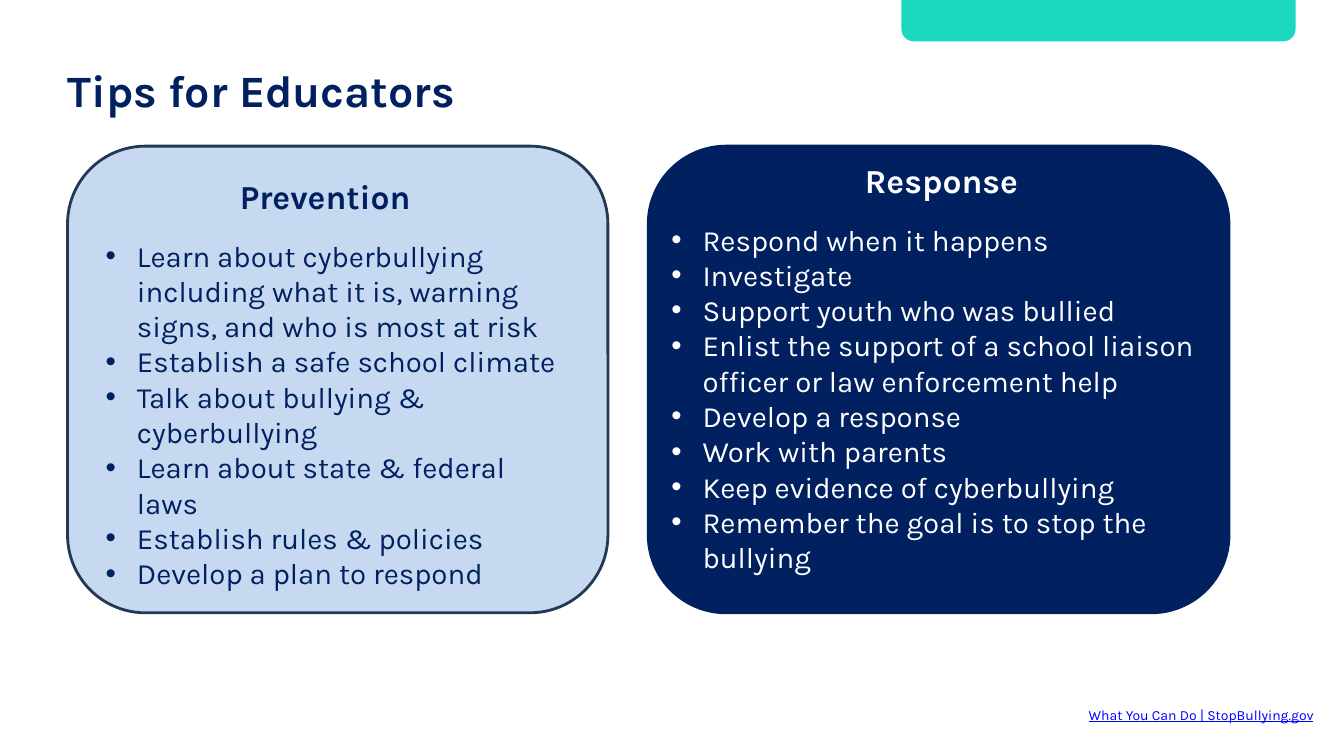
from pptx import Presentation
from pptx.dml.color import RGBColor
from pptx.enum.shapes import MSO_SHAPE
from pptx.enum.text import MSO_ANCHOR, MSO_AUTO_SIZE, PP_ALIGN
from pptx.oxml import parse_xml
from pptx.oxml.ns import nsdecls
from pptx.util import Emu, Pt

ROUNDED = MSO_SHAPE.ROUNDED_RECTANGLE
MIDDLE = MSO_ANCHOR.MIDDLE
GROW = MSO_AUTO_SIZE.SHAPE_TO_FIT_TEXT
NO_FIT = MSO_AUTO_SIZE.NONE
LEFT = PP_ALIGN.LEFT

EMU_PER_PX = 9144  # 100 px to the inch
FONT = "Karla"
NAVY, WHITE, TEAL = "002060", "FFFFFF", "1CD8BF"
PALE_BLUE, SLATE, LINK_BLUE = "C6D9F1", "233953", "0000FF"

PREVENTION_TIPS = [
    "Learn about cyberbullying including what it is, warning signs, and who is most at risk",
    "Establish a safe school climate",
    "Talk about bullying & cyberbullying",
    "Learn about state & federal laws",
    "Establish rules & policies",
    "Develop a plan to respond",
]
RESPONSE_TIPS = [
    "Respond when it happens",
    "Investigate",
    "Support youth who was bullied",
    "Enlist the support of a school liaison officer or law enforcement help",
    "Develop a response",
    "Work with parents",
    "Keep evidence of cyberbullying",
    "Remember the goal is to stop the bullying",
]


def px(length):
    return Emu(length * EMU_PER_PX)


def rgb(color):
    return RGBColor.from_string(color)


class SlideBuilder:
    def __init__(self, presentation):
        layout = presentation.slide_layouts[5]
        self.slide = presentation.slides.add_slide(layout)

    def format_runs(self, paragraph, size, color, bold=False, underline=False):
        for run in paragraph.runs:
            font = run.font
            font.name, font.size = FONT, Pt(size)
            font.bold, font.underline = bold, underline
            font.color.rgb = rgb(color)

    def title(self, text, box):
        shape = self.slide.shapes.title
        shape.left, shape.top, shape.width, shape.height = map(px, box)
        frame = shape.text_frame
        frame.text = text
        frame.auto_size = NO_FIT
        frame.word_wrap = True
        frame.vertical_anchor = MIDDLE
        frame.margin_left = frame.margin_right = 0
        frame.margin_top = frame.margin_bottom = 0
        paragraph = frame.paragraphs[0]
        paragraph.alignment = LEFT
        paragraph.line_spacing = 0.9
        self.format_runs(paragraph, 32, NAVY, bold=True)

    def panel(self, box, fill, line=None, corner=None):
        shape = self.slide.shapes.add_shape(ROUNDED, *map(px, box))
        shape.shadow.inherit = False
        shape.fill.solid()
        shape.fill.fore_color.rgb = rgb(fill)
        if line:
            shape.line.color.rgb = rgb(line)
            shape.line.width = Pt(2)
        else:
            shape.line.fill.background()
        if corner is not None:
            shape.adjustments[0] = corner

    def text(self, lines, box, size, color, bullets=False, **style):
        frame = self.slide.shapes.add_textbox(*map(px, box)).text_frame
        frame.word_wrap = True
        frame.auto_size = GROW
        for index, line in enumerate(lines):
            paragraph = frame.add_paragraph() if index else frame.paragraphs[0]
            paragraph.text = line
            if bullets:
                self.add_bullet(paragraph)
            self.format_runs(paragraph, size, color, **style)

    def add_bullet(self, paragraph):
        properties = paragraph._p.get_or_add_pPr()
        properties.set("marL", str(px(31)))
        properties.set("indent", str(-px(31)))
        for element in ('a:buFont {} typeface="Arial"', 'a:buChar {} char="•"'):
            properties.append(parse_xml(f"<{element.format(nsdecls('a'))}/>"))


def main():
    presentation = Presentation()
    presentation.slide_width, presentation.slide_height = px(1333), px(750)
    builder = SlideBuilder(presentation)

    builder.panel((894, -46, 391, 87), TEAL, corner=0.14)
    builder.title("Tips for Educators", (67, 30, 1200, 125))
    builder.text(["What You Can Do | StopBullying.gov"], (1070, 696, 263, 27),
                 10, LINK_BLUE, underline=True)

    cards = [
        ("Prevention", PREVENTION_TIPS, PALE_BLUE, SLATE, NAVY,
         (67, 145, 536, 463), (228, 170, 284, 50), (95, 231, 480, 323)),
        ("Response", RESPONSE_TIPS, NAVY, NAVY, WHITE,
         (643, 145, 576, 463), (848, 154, 320, 50), (656, 215, 576, 358)),
    ]
    for heading, tips, fill, line, color, panel_box, heading_box, tips_box in cards:
        builder.panel(panel_box, fill, line)
        builder.text([heading], heading_box, 24, color, bold=True)
        builder.text(tips, tips_box, 21, color, bullets=True)

    presentation.save("out.pptx")


if __name__ == "__main__":
    main()
